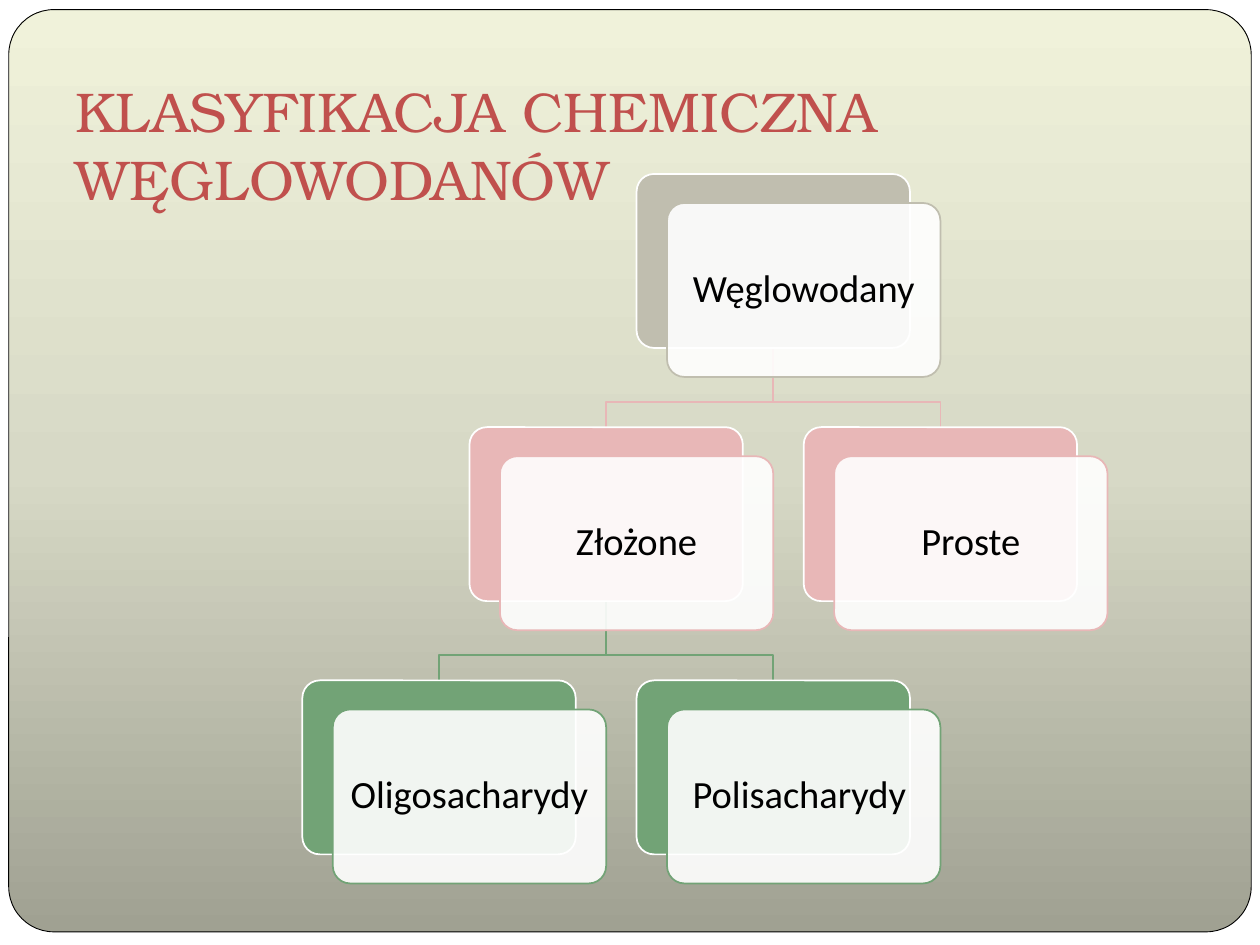
"""Builds a slide with a tree diagram of the chemical classes of carbohydrates."""
from copy import deepcopy

from pptx import Presentation
from pptx.dml.color import RGBColor
from pptx.enum.shapes import MSO_SHAPE
from pptx.enum.text import MSO_ANCHOR, MSO_AUTO_SIZE, PP_ALIGN
from pptx.oxml.ns import qn
from pptx.util import Pt

ROUNDED = MSO_SHAPE.ROUNDED_RECTANGLE
LEFT, CENTER = PP_ALIGN.LEFT, PP_ALIGN.CENTER
BOTTOM, MIDDLE = MSO_ANCHOR.BOTTOM, MSO_ANCHOR.MIDDLE
NO_AUTOFIT = MSO_AUTO_SIZE.NONE

WHITE = RGBColor(0xFF, 0xFF, 0xFF)
BLACK = RGBColor(0x00, 0x00, 0x00)
RED = RGBColor(0xC0, 0x50, 0x4D)
STONE = RGBColor(0xC0, 0xBE, 0xAF)
PINK = RGBColor(0xE8, 0xB7, 0xB7)
GREEN = RGBColor(0x72, 0xA3, 0x76)
PANEL_COLORS = [RGBColor(0xA0, 0xA1, 0x92), RGBColor(0xD7, 0xD9, 0xC6),
                RGBColor(0xF0, 0xF2, 0xDA)]

CARD_WIDTH, CARD_HEIGHT = 156.2, 99.4
FRONT_DX, FRONT_DY = 17.4, 16.6
FIRST_LEFT, COLUMN_STEP = 172.8, 95.5
FIRST_TOP, ROW_STEP = 99.4, 144.7
STEM = 31
LEVEL_COLORS = [STONE, PINK, GREEN]
CARDS = [
    ("Węglowodany", 2, 0),
    ("Złożone", 1, 1),
    ("Oligosacharydy", 0, 2),
    ("Polisacharydy ", 2, 2),
    ("Proste", 3, 1),
]
BRANCHES = [(2, 3, 0), (1, 2, 1), (1, 0, 1), (2, 1, 0)]


def add_rounded(left, top, width, height, radius, line_color, line_width):
    shape = slide.shapes.add_shape(ROUNDED, Pt(left), Pt(top), Pt(width), Pt(height))
    shape.adjustments[0] = radius
    shape.shadow.inherit = False
    shape.line.color.rgb = line_color
    shape.line.width = Pt(line_width)
    return shape


def write_text(shape, text, frame_format, paragraph_format, font_format, color):
    frame = shape.text_frame
    frame.text = text
    paragraph = frame.paragraphs[0]
    font = paragraph.runs[0].font
    for target, values in ((frame, frame_format), (paragraph, paragraph_format),
                           (font, font_format)):
        for name, value in values.items():
            setattr(target, name, value)
    font.color.rgb = color


presentation = Presentation()
presentation.slide_width, presentation.slide_height = Pt(720), Pt(540)
slide = presentation.slides.add_slide(presentation.slide_layouts[5])
slide.background.fill.solid()
slide.background.fill.fore_color.rgb = WHITE

panel = add_rounded(5, 5.5, 710, 527, 0.049, BLACK, 0.5)
panel.fill.gradient()
panel.fill.gradient_angle = 90
stop_list = next(panel._element.iter(qn("a:gsLst")))
stop_list.append(deepcopy(stop_list[-1]))
for index, (stop, color) in enumerate(zip(panel.fill.gradient_stops, PANEL_COLORS)):
    stop.position = index / 2
    stop.color.rgb = color

title = slide.shapes.title
title.left, title.top, title.width, title.height = Pt(36), Pt(46), Pt(648), Pt(82)
write_text(
    title, "KLASYFIKACJA CHEMICZNA WĘGLOWODANÓW",
    {"vertical_anchor": BOTTOM, "auto_size": NO_AUTOFIT, "word_wrap": True,
     "margin_left": Pt(7.2), "margin_right": Pt(7.2),
     "margin_top": Pt(3.6), "margin_bottom": Pt(7.2)},
    {"alignment": LEFT}, {"name": "TeX Gyre Bonum", "size": Pt(32)}, RED)
slide.shapes._spTree.insert(2, panel._element)

for parent_column, child_column, row in BRANCHES:
    start_x, end_x = (FIRST_LEFT + column * COLUMN_STEP + CARD_WIDTH / 2
                      for column in (parent_column, child_column))
    start_y = FIRST_TOP + row * ROW_STEP + CARD_HEIGHT
    end_y = FIRST_TOP + (row + 1) * ROW_STEP
    builder = slide.shapes.build_freeform(Pt(start_x), Pt(start_y))
    points = [(start_x, start_y + STEM), (end_x, start_y + STEM), (end_x, end_y)]
    builder.add_line_segments([(Pt(x), Pt(y)) for x, y in points], close=False)
    branch = builder.convert_to_shape()
    branch.fill.background()
    branch.shadow.inherit = False
    branch.line.color.rgb = LEVEL_COLORS[row + 1]
    branch.line.width = Pt(1)

for label, column, row in CARDS:
    left = FIRST_LEFT + column * COLUMN_STEP
    top = FIRST_TOP + row * ROW_STEP
    color = LEVEL_COLORS[row]
    back = add_rounded(left, top, CARD_WIDTH, CARD_HEIGHT, 0.1, WHITE, 1)
    back.fill.solid()
    back.fill.fore_color.rgb = color
    front = add_rounded(left + FRONT_DX, top + FRONT_DY, CARD_WIDTH, CARD_HEIGHT,
                        0.1, color, 1)
    front.fill.solid()
    front.fill.fore_color.rgb = WHITE
    fill_color = front._element.spPr.find(qn("a:solidFill"))[0]
    fill_color.append(fill_color.makeelement(qn("a:alpha"), {"val": "90000"}))
    write_text(
        front, label,
        {"vertical_anchor": MIDDLE, "word_wrap": True, "margin_left": Pt(3.6),
         "margin_right": Pt(3.6), "margin_top": Pt(3.6), "margin_bottom": Pt(3.6)},
        {"alignment": CENTER, "line_spacing": 0.9},
        {"name": "Calibri", "size": Pt(22)}, BLACK)

presentation.save("out.pptx")
